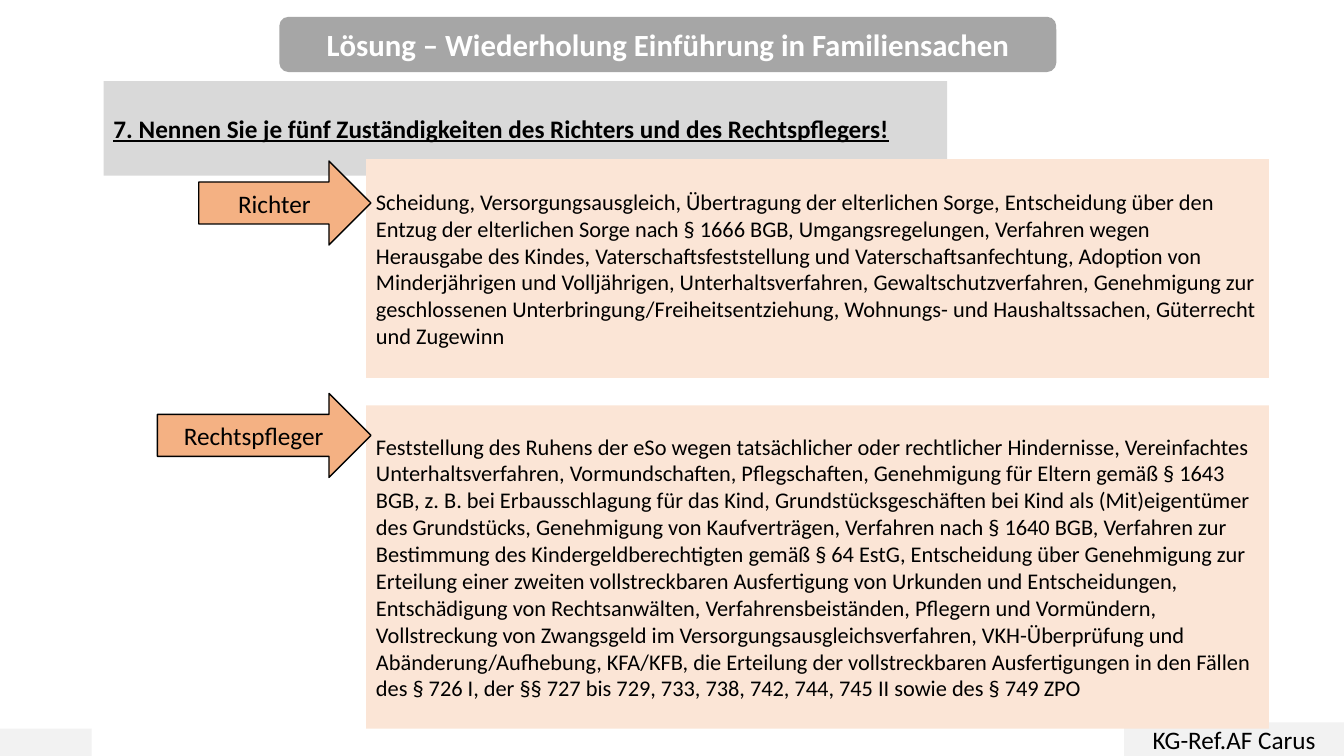
from pptx import Presentation
from pptx.dml.color import RGBColor
from pptx.enum.shapes import MSO_SHAPE as SHAPE
from pptx.enum.text import MSO_ANCHOR as ANCHOR, PP_ALIGN as ALIGN
from pptx.util import Pt

COLORS = {
    "title": "A6A6A6", "question": "D9D9D9", "footer": "F2F2F2",
    "answer": "FBE5D6", "arrow": "F4B183", "dark": "000000", "light": "FFFFFF",
}
ARROW_TIP, ARROW_HEIGHT = 265, 60
ANSWER_LEFT, ANSWER_WIDTH = 261.5, 645

JUDGE_DUTIES = [
    "Scheidung", "Versorgungsausgleich", "Übertragung der elterlichen Sorge",
    "Entscheidung über den Entzug der elterlichen Sorge nach § 1666 BGB",
    "Umgangsregelungen", "Verfahren wegen Herausgabe des Kindes",
    "Vaterschaftsfeststellung und Vaterschaftsanfechtung",
    "Adoption von Minderjährigen und Volljährigen", "Unterhaltsverfahren",
    "Gewaltschutzverfahren",
    "Genehmigung zur geschlossenen Unterbringung/Freiheitsentziehung",
    "Wohnungs- und Haushaltssachen", "Güterrecht und Zugewinn",
]
CLERK_DUTIES = [
    "Feststellung des Ruhens der eSo wegen tatsächlicher oder rechtlicher "
    "Hindernisse",
    "Vereinfachtes Unterhaltsverfahren", "Vormundschaften", "Pflegschaften",
    "Genehmigung für Eltern gemäß § 1643 BGB",
    "z. B. bei Erbausschlagung für das Kind",
    "Grundstücksgeschäften bei Kind als (Mit)eigentümer des Grundstücks",
    "Genehmigung von Kaufverträgen", "Verfahren nach § 1640 BGB",
    "Verfahren zur Bestimmung des Kindergeldberechtigten gemäß § 64 EstG",
    "Entscheidung über Genehmigung zur Erteilung einer zweiten "
    "vollstreckbaren Ausfertigung von Urkunden und Entscheidungen",
    "Entschädigung von Rechtsanwälten", "Verfahrensbeiständen",
    "Pflegern und Vormündern",
    "Vollstreckung von Zwangsgeld im Versorgungsausgleichsverfahren",
    "VKH-Überprüfung und Abänderung/Aufhebung", "KFA/KFB",
    "die Erteilung der vollstreckbaren Ausfertigungen in den Fällen des "
    "§ 726 I",
    "der §§ 727 bis 729, 733, 738, 742, 744, 745 II sowie des § 749 ZPO",
]
# role, arrow top, arrow width, answer top, answer height, duties
ROLES = [
    ("Richter", 115, 123, 113.6, 156.4, JUDGE_DUTIES),
    ("Rechtspfleger", 281, 152.6, 289.5, 231, CLERK_DUTIES),
]


class SlideBuilder:
    def __init__(self, slide, font="Calibri"):
        self.slide, self.font = slide, font

    def shape(self, kind, box, fill, outlined=False):
        sp = self.slide.shapes.add_shape(kind, *map(Pt, box))
        sp.shadow.inherit = False
        sp.fill.solid()
        sp.fill.fore_color.rgb = RGBColor.from_string(COLORS[fill])
        if outlined:
            sp.line.color.rgb = RGBColor.from_string(COLORS["dark"])
            sp.line.width = Pt(1)
        else:
            sp.line.fill.background()
        return sp

    def text(self, sp, text, size=18, color="dark", align=ALIGN.CENTER,
             bold=False, underline=False):
        tf = sp.text_frame
        tf.word_wrap = True
        tf.vertical_anchor = ANCHOR.MIDDLE
        p = tf.paragraphs[0]
        p.alignment = align
        r = p.add_run()
        r.text = text
        r.font.name, r.font.size = self.font, Pt(size)
        r.font.bold, r.font.underline = bold, underline
        r.font.color.rgb = RGBColor.from_string(COLORS[color])

    def panel(self, box, fill, text, **style):
        self.text(self.shape(SHAPE.RECTANGLE, box, fill), text, **style)

    def title(self, box, text):
        sp = self.shape(SHAPE.ROUNDED_RECTANGLE, box, "title")
        self.text(sp, text, size=22, color="light", bold=True)

    def arrow(self, box, text):
        sp = self.shape(SHAPE.RIGHT_ARROW, box, "arrow", outlined=True)
        self.text(sp, text)


def main():
    prs = Presentation()
    prs.slide_width, prs.slide_height = Pt(960), Pt(540)
    s = SlideBuilder(prs.slides.add_slide(prs.slide_layouts[6]))

    s.panel((74, 58, 602.6, 67.5), "question",
            "7. Nennen Sie je fünf Zuständigkeiten des Richters und des "
            "Rechtspflegers!", align=ALIGN.LEFT, bold=True, underline=True)
    s.title((199.5, 12, 555, 39.5),
            "Lösung – Wiederholung Einführung in Familiensachen")
    s.shape(SHAPE.RECTANGLE, (0, 520.5, 65.5, 19.5), "footer")
    s.panel((803, 516, 157, 24), "footer", "KG-Ref.AF Carus")

    for _, _, _, top, height, duties in ROLES:
        s.panel((ANSWER_LEFT, top, ANSWER_WIDTH, height), "answer",
                ", ".join(duties), size=16, align=ALIGN.LEFT)
    for role, top, width, *_ in ROLES:
        s.arrow((ARROW_TIP - width, top, width, ARROW_HEIGHT), role)

    prs.save("out.pptx")


if __name__ == "__main__":
    main()
